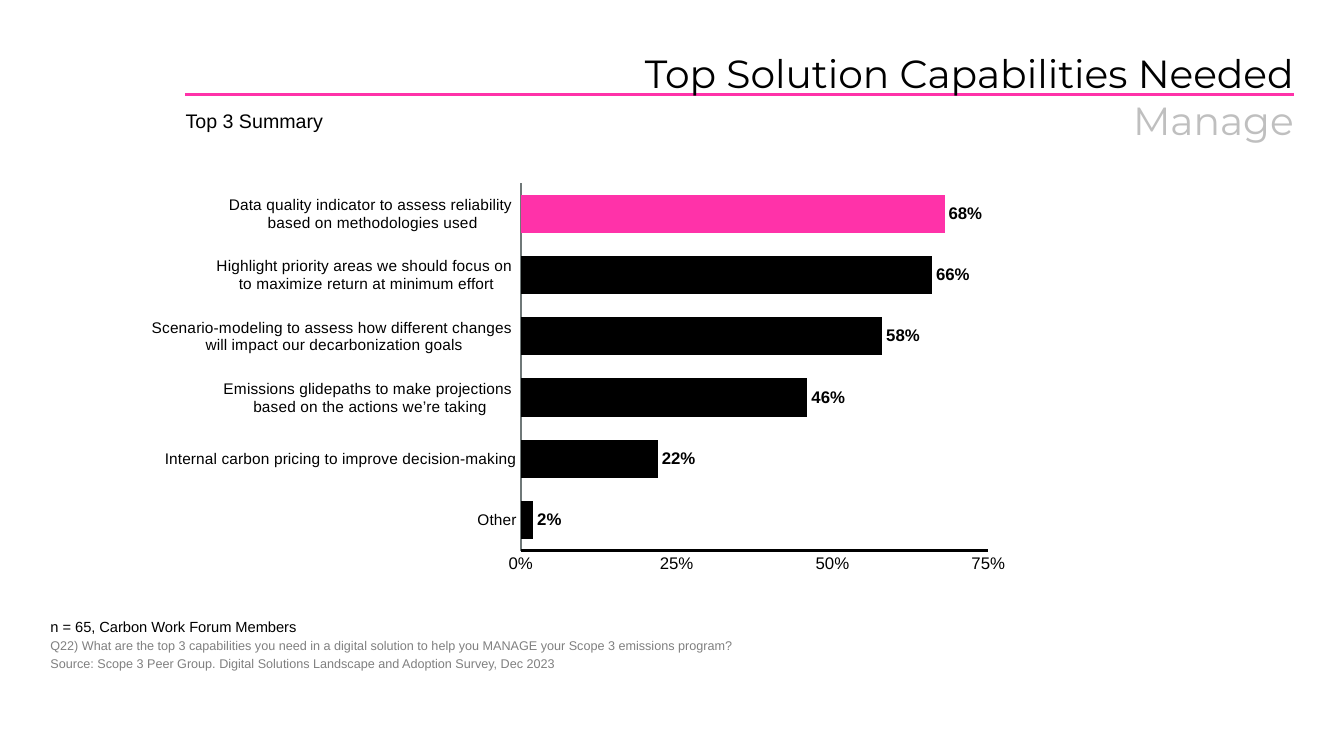
from lxml import etree
from pptx import Presentation
from pptx.chart.data import CategoryChartData
from pptx.dml.color import RGBColor
from pptx.enum.chart import XL_CHART_TYPE, XL_LABEL_POSITION, XL_TICK_MARK
from pptx.enum.shapes import MSO_CONNECTOR
from pptx.enum.text import MSO_ANCHOR, PP_ALIGN
from pptx.oxml import parse_xml
from pptx.oxml.ns import nsdecls, qn
from pptx.util import Inches, Pt

BAR = XL_CHART_TYPE.BAR_CLUSTERED
OUTSIDE_END = XL_LABEL_POSITION.OUTSIDE_END
NO_TICK = XL_TICK_MARK.NONE
STRAIGHT = MSO_CONNECTOR.STRAIGHT
TOP, BOTTOM = MSO_ANCHOR.TOP, MSO_ANCHOR.BOTTOM
LEFT, RIGHT = PP_ALIGN.LEFT, PP_ALIGN.RIGHT

THEME = {
    "black": RGBColor.from_string("000000"),
    "pink": RGBColor.from_string("FF32A9"),
    "silver": RGBColor.from_string("BFBFBF"),
    "gray": RGBColor.from_string("808080"),
    "slate": RGBColor.from_string("6F7878"),
    "heading": "Montserrat",
    "body": "Arial",
    "title": 28,
    "subtitle": 14,
    "sample": 10.5,
    "source": 9,
    "chart": 10,
    "category": 11,
    "value": 12,
}


def style_font(font, size, color="black", face="body", bold=False):
    settings = {"size": Pt(THEME[size]), "name": THEME[face], "bold": bold}
    for attribute, value in settings.items():
        setattr(font, attribute, value)
    font.color.rgb = THEME[color]


def add_text(slide, box, paragraphs, inset=0.1, anchor=TOP, align=LEFT, face="body", gap=0):
    frame = slide.shapes.add_textbox(*map(Inches, box)).text_frame
    settings = {
        "word_wrap": True,
        "vertical_anchor": anchor,
        "margin_left": 0,
        "margin_top": Inches(inset),
        "margin_right": Inches(inset),
        "margin_bottom": Inches(inset),
    }
    for attribute, value in settings.items():
        setattr(frame, attribute, value)
    for index, runs in enumerate(paragraphs):
        paragraph = frame.add_paragraph() if index else frame.paragraphs[0]
        paragraph.alignment = align
        if index:
            paragraph.space_before = Pt(gap)
        for position, (text, size, color) in enumerate(runs):
            if position:
                paragraph.add_line_break()
            run = paragraph.add_run()
            run.text = text
            style_font(run.font, size, color, face)


presentation = Presentation()
presentation.slide_width = Inches(13.33)
presentation.slide_height = Inches(7.5)
slide = presentation.slides.add_slide(presentation.slide_layouts[6])

title_rule = slide.shapes.add_connector(
    STRAIGHT, Inches(1.84), Inches(0.94), Inches(12.83), Inches(0.94)
)
title_rule.line.color.rgb = THEME["pink"]
title_rule.line.width = Pt(2)
etree.SubElement(title_rule._element.spPr, qn("a:effectLst"))

add_text(
    slide,
    (1.84, 0.49, 10.99, 0.49),
    [[("Top Solution Capabilities Needed", "title", "black"), ("Manage", "title", "silver")]],
    inset=0,
    align=RIGHT,
    face="heading",
)
add_text(slide, (1.84, 0.98, 7.22, 0.44), [[("Top 3 Summary", "subtitle", "black")]])
add_text(
    slide,
    (0.5, 6.02, 8.82, 0.74),
    [
        [("n = 65, Carbon Work Forum Members", "sample", "black")],
        [(
            "Q22) What are the top 3 capabilities you need in a digital solution "
            "to help you MANAGE your Scope 3 emissions program?",
            "source",
            "gray",
        )],
        [(
            "Source: Scope 3 Peer Group. Digital Solutions Landscape and Adoption Survey, Dec 2023",
            "source",
            "gray",
        )],
    ],
    anchor=BOTTOM,
    gap=2,
)

capabilities = {
    "Other": 0.02,
    "Internal carbon pricing to improve decision-making": 0.22,
    "Emissions glidepaths to make projections \nbased on the actions we’re taking": 0.46,
    "Scenario-modeling to assess how different changes \n"
    "will impact our decarbonization goals": 0.58,
    "Highlight priority areas we should focus on \nto maximize return at minimum effort": 0.66,
    "Data quality indicator to assess reliability \nbased on methodologies used": 0.68,
}
chart_data = CategoryChartData(number_format="0%")
chart_data.categories = list(capabilities)
chart_data.add_series("Series 1", list(capabilities.values()))
chart = slide.shapes.add_chart(
    BAR, Inches(0.5), Inches(1.8), Inches(9.6), Inches(4.22), chart_data
).chart
chart.has_legend = False
chart.has_title = False
style_font(chart.font, "chart")

for axis, size, color in (
    (chart.category_axis, "category", "slate"),
    (chart.value_axis, "value", "black"),
):
    axis.major_tick_mark = NO_TICK
    axis.minor_tick_mark = NO_TICK
    axis.has_major_gridlines = False
    axis.format.line.color.rgb = THEME[color]
    axis.format.line.width = Pt(1.57)
    style_font(axis.tick_labels.font, size)

value_axis = chart.value_axis
value_axis.minimum_scale = 0
value_axis.maximum_scale = 0.75
value_axis.major_unit = 0.25
value_axis.tick_labels.number_format = "0%"
value_axis.tick_labels.number_format_is_linked = False

plot = chart.plots[0]
plot.gap_width = 60
plot.vary_by_categories = False
series = plot.series[0]
series.invert_if_negative = False
top_capability = series.points[len(capabilities) - 1]
for bar, color in ((series, "black"), (top_capability, "pink")):
    bar.format.fill.solid()
    bar.format.fill.fore_color.rgb = THEME[color]

labels = series.data_labels
label_settings = {
    "show_value": True,
    "number_format": "0%",
    "number_format_is_linked": False,
    "position": OUTSIDE_END,
}
for attribute, value in label_settings.items():
    setattr(labels, attribute, value)
style_font(labels.font, "value", bold=True)

plot_area = chart._chartSpace.chart.plotArea
for old_layout in plot_area.findall(qn("c:layout")):
    plot_area.remove(old_layout)
plot_area.insert(0, parse_xml(
    f'<c:layout {nsdecls("c")}><c:manualLayout><c:layoutTarget val="inner"/>'
    '<c:xMode val="edge"/><c:yMode val="edge"/><c:x val="0.486"/><c:y val="0.004"/>'
    '<c:w val="0.483"/><c:h val="0.864"/></c:manualLayout></c:layout>'
))

presentation.save("out.pptx")
